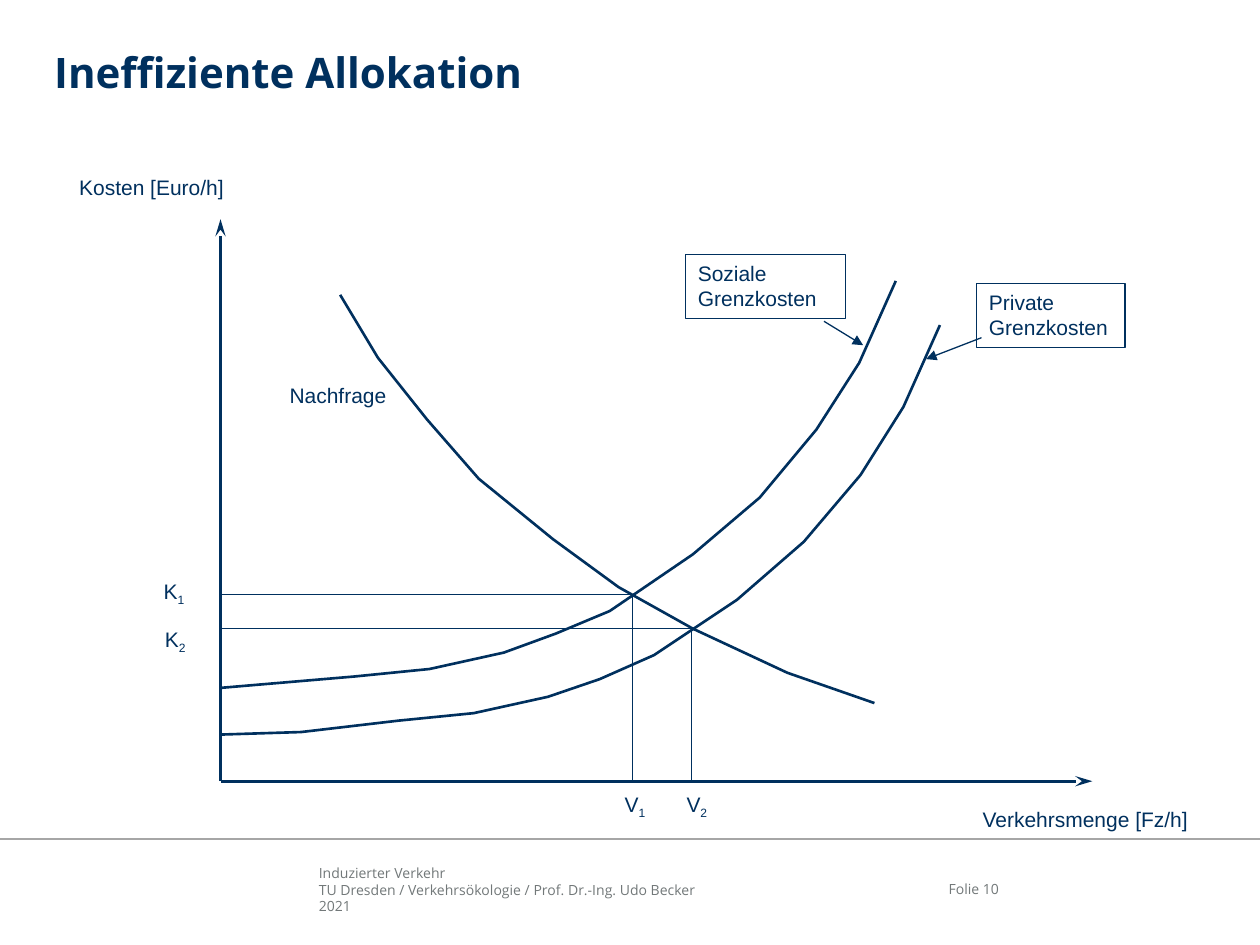
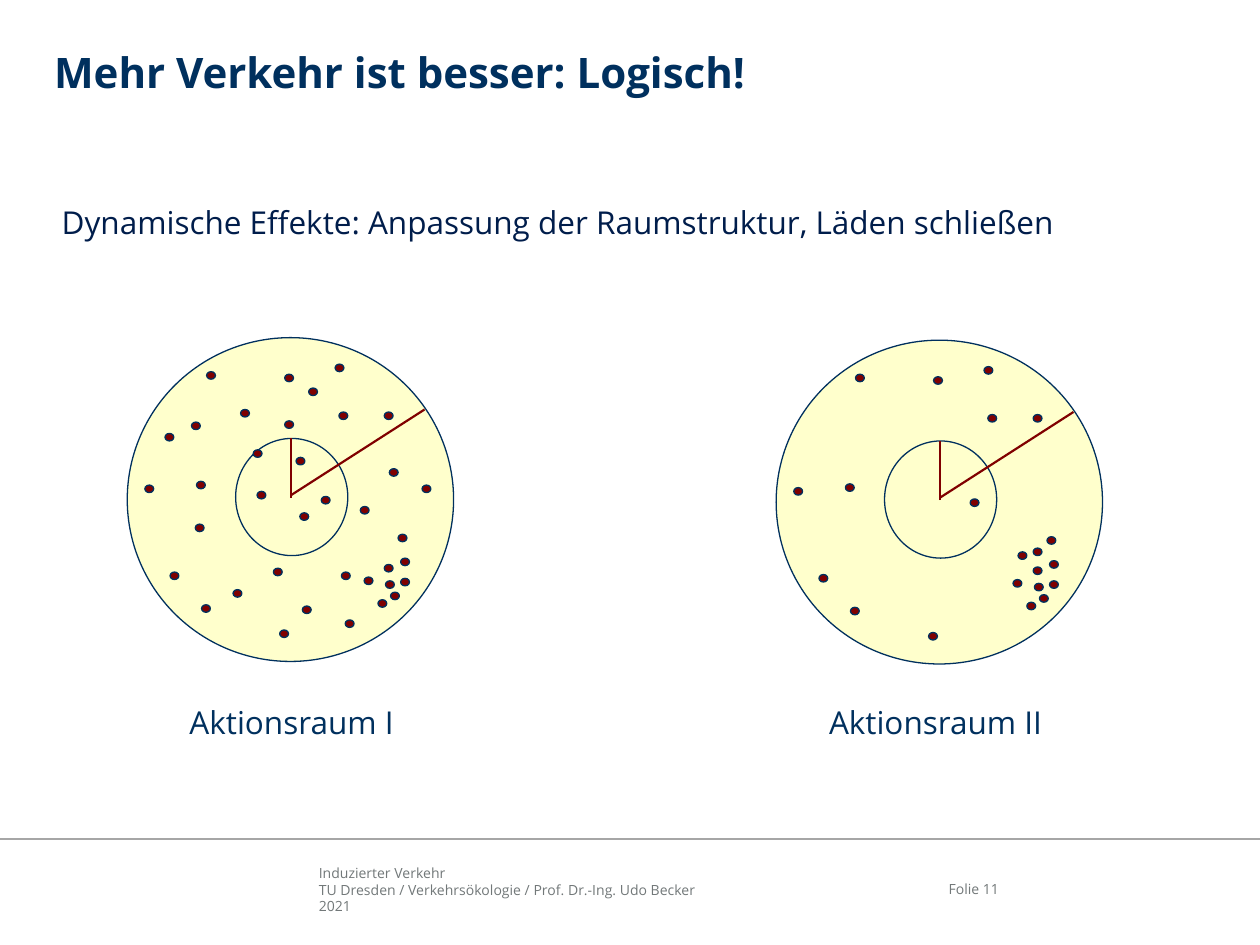
from dataclasses import dataclass

from lxml import etree
from pptx import Presentation
from pptx import util as u
from pptx.dml.color import RGBColor
from pptx.enum import shapes, text
from pptx.oxml import ns

COLORS = {
    "navy": "00305E",
    "deep_navy": "001D4B",
    "gray": "727879",
    "rule": "A6A6A6",
    "cream": "FFFFCC",
    "maroon": "800000",
}
HEADING_FONT, LABEL_FONT = "Open Sans", "Arial"
FIRST_NUMBER = 10
FOOTER = ["Induzierter Verkehr",
          "TU Dresden / Verkehrsökologie / Prof. Dr.-Ing. Udo Becker", "2021"]
Point = tuple[float, float]


@dataclass(frozen=True)
class TextStyle:
    font: str
    size: float
    color: str = "navy"
    bold: bool = False
    align: text.PP_ALIGN = text.PP_ALIGN.LEFT


@dataclass(frozen=True)
class Box:
    left: float
    top: float
    width: float
    height: float

    def lengths(self) -> list[u.Length]:
        return [cm(v) for v in (self.left, self.top, self.width, self.height)]

    def moved(self, dx: float, dy: float) -> "Box":
        return Box(self.left + dx, self.top + dy, self.width, self.height)


@dataclass(frozen=True)
class Label:
    words: str
    box: Box
    subscript: str = ""
    framed: bool = False


@dataclass(frozen=True)
class Line:
    start: Point
    end: Point
    width: float = 0.75
    color: str = "navy"
    arrow: str = ""
    arrow_length: str = "med"


@dataclass(frozen=True)
class ActionSpace:
    name: str
    offset: Point
    caption_left: float
    shops: list[Point]


TITLE = TextStyle(HEADING_FONT, 24, bold=True)
FOOTER_TEXT = TextStyle(HEADING_FONT, 8, "gray")
PAGE_TEXT = TextStyle(HEADING_FONT, 8, "gray", align=text.PP_ALIGN.RIGHT)
CAPTION = TextStyle(HEADING_FONT, 18, align=text.PP_ALIGN.CENTER)
STATEMENT = TextStyle(HEADING_FONT, 18, "deep_navy")
DIAGRAM_TEXT = TextStyle(LABEL_FONT, 12)

# Cost diagram, in inches
ORIGIN_X, ORIGIN_Y = 1.75, 6.2
OPTIMUM, MARKET = (5.02, 4.72), (5.49, 4.99)
SOCIAL_COSTS = [(1.75, 5.46), (2.81, 5.37), (3.41, 5.31), (4, 5.18), (4.41, 5.03),
                (4.84, 4.85), (5.5, 4.4), (6.03, 3.95), (6.48, 3.41), (6.82, 2.88),
                (7.11, 2.23)]
DEMAND = [(2.7, 2.34), (3, 2.84), (3.39, 3.33), (3.8, 3.8), (4.39, 4.28),
          (4.91, 4.66), (5.5, 4.99), (6.25, 5.34), (6.94, 5.58)]
PRIVATE_COSTS = [(1.75, 5.83), (2.39, 5.81), (3.16, 5.72), (3.76, 5.66), (4.35, 5.53),
                 (4.76, 5.39), (5.19, 5.2), (5.85, 4.76), (6.38, 4.3), (6.83, 3.77),
                 (7.17, 3.23), (7.46, 2.58)]
AXES = [Line((ORIGIN_X, ORIGIN_Y), end, 1.5, arrow="stealth", arrow_length="lg")
        for end in ((ORIGIN_X, 1.74), (8.67, ORIGIN_Y))]
POINTERS = [Line((6.54, 2.55), (6.85, 2.74), arrow="triangle"),
            Line((7.79, 2.68), (7.35, 2.85), arrow="triangle")]
LABELS = [
    Label("Verkehrsmenge [Fz/h]", Box(7.7, 6.35, 2.05, 0.3)),
    Label("Kosten [Euro/h]", Box(0.53, 1.34, 2.05, 0.3)),
    Label("Soziale Grenzkosten", Box(5.44, 2.02, 1.27, 0.51), framed=True),
    Label("Private Grenzkosten", Box(7.75, 2.25, 1.18, 0.51), framed=True),
    Label("Nachfrage", Box(2.2, 2.99, 2.05, 0.3)),
    Label("K", Box(1.2, 4.54, 0.49, 0.3), "1"),
    Label("K", Box(1.21, 4.92, 0.49, 0.3), "2"),
    Label("V", Box(4.86, 6.23, 0.49, 0.3), "1"),
    Label("V", Box(5.35, 6.23, 0.49, 0.3), "2"),
]

# Action spaces: shops by their upper left corner in the first space
REGION = Box(1.01, 2.68, 2.59, 2.57)
NEIGHBORHOOD = Box(1.87, 3.48, 0.89, 0.93)
RADII = [Line((2.31, 3.95), (2.31, 3.48), 1.25, "maroon"),
         Line((2.31, 3.93), (3.37, 3.25), 1.25, "maroon")]
LASTING_SHOPS = [
    (2.69, 3.27), (3.16, 4.24), (2.22, 5), (2.26, 2.97), (1.35, 4.54), (1.15, 3.85),
    (1.6, 4.8), (3.06, 4.61), (3, 4.76), (2.89, 4.58), (3.18, 4.59), (3.05, 4.48),
    (2.66, 2.89), (1.56, 3.82), (1.64, 2.95), (3.05, 3.27), (3.1, 4.7), (3.18, 4.43),
    (2.55, 3.94),
]
CLOSING_SHOPS = [
    (1.85, 4.68), (1.52, 3.35), (2.74, 4.92), (2.71, 4.54), (1.55, 4.16), (3.35, 3.85),
    (2.17, 4.51), (3.09, 3.72), (1.91, 3.25), (2.26, 3.34), (2.86, 4.02), (2.4, 4.81),
    (1.31, 3.44), (2.45, 3.08), (2.38, 4.07), (2.04, 3.9), (2.35, 3.63), (2.01, 3.57),
]
NEW_SHOPS = [(3.05, 4.33), (2.93, 4.36)]
SPACES = [
    ActionSpace("Aktionsraum I", (0, 0), 0.83, LASTING_SHOPS + CLOSING_SHOPS),
    ActionSpace("Aktionsraum II", (5.15, 0.02), 5.94, LASTING_SHOPS + NEW_SHOPS),
]


def cm(inches: float) -> u.Length:
    return u.Cm(inches * 2.54)


def rgb(name: str) -> RGBColor:
    return RGBColor.from_string(COLORS[name])


# Text
def format_paragraph(paragraph, style: TextStyle) -> None:
    paragraph.alignment = style.align
    paragraph.line_spacing = 1.0
    paragraph.space_before = u.Pt(0)
    font = paragraph.font
    font.name, font.size, font.bold = style.font, u.Pt(style.size), style.bold
    font.color.rgb = rgb(style.color)


def fill_text(shape, lines: list[str], style: TextStyle,
              insets: tuple[float, ...] = (0.1, 0.05, 0.1, 0.05)) -> None:
    frame = shape.text_frame
    frame.word_wrap = True
    frame.auto_size = text.MSO_AUTO_SIZE.NONE
    frame.vertical_anchor = text.MSO_ANCHOR.TOP
    (frame.margin_left, frame.margin_top,
     frame.margin_right, frame.margin_bottom) = map(cm, insets)
    frame.text = "\n".join(lines)
    for paragraph in frame.paragraphs:
        format_paragraph(paragraph, style)


def add_text(slide, box: Box, lines: list[str], style: TextStyle, **options) -> None:
    fill_text(slide.shapes.add_textbox(*box.lengths()), lines, style, **options)


# Lines and shapes
def add_line(slide, line: Line, offset: Point = (0, 0)) -> None:
    dx, dy = offset
    ends = [cm(v) for x, y in (line.start, line.end) for v in (x + dx, y + dy)]
    connector = slide.shapes.add_connector(shapes.MSO_CONNECTOR.STRAIGHT, *ends)
    connector.line.width = u.Pt(line.width)
    connector.line.color.rgb = rgb(line.color)
    if line.arrow:
        etree.SubElement(connector.line._get_or_add_ln(), ns.qn("a:tailEnd"),
                         type=line.arrow, w="med", len=line.arrow_length)
    etree.SubElement(connector._element.spPr, ns.qn("a:effectLst"))


def outline(shape, width: float = 0.75, fill: str = "") -> None:
    shape.shadow.inherit = False
    shape.line.color.rgb = rgb("navy")
    shape.line.width = u.Pt(width)
    if fill:
        shape.fill.solid()
        shape.fill.fore_color.rgb = rgb(fill)
    else:
        shape.fill.background()


def add_ellipse(slide, box: Box, fill: str) -> None:
    outline(slide.shapes.add_shape(shapes.MSO_SHAPE.OVAL, *box.lengths()), fill=fill)


def add_curve(slide, points: list[Point]) -> None:
    first, *rest = [(cm(x), cm(y)) for x, y in points]
    builder = slide.shapes.build_freeform(*first)
    builder.add_line_segments(rest, close=False)
    outline(builder.convert_to_shape(), 1.5)


def add_label(slide, label: Label) -> None:
    if label.framed:
        shape = slide.shapes.add_shape(shapes.MSO_SHAPE.RECTANGLE, *label.box.lengths())
        outline(shape)
    else:
        shape = slide.shapes.add_textbox(*label.box.lengths())
    fill_text(shape, [label.words], DIAGRAM_TEXT)
    if label.subscript:
        run = shape.text_frame.paragraphs[0].add_run()
        run.text = label.subscript
        run._r.get_or_add_rPr().set("baseline", "-25000")


# Slides
def start_slide(presentation, title: str):
    slide = presentation.slides.add_slide(presentation.slide_layouts[5])
    number = FIRST_NUMBER + len(presentation.slides) - 1
    no_insets = (0, 0, 0, 0)
    add_text(slide, Box(2.53, 6.86, 4.52, 0.4), FOOTER, FOOTER_TEXT, insets=no_insets)
    add_line(slide, Line((0, 6.66), (10, 6.66), 1, "rule"))
    add_text(slide, Box(7.17, 6.99, 0.76, 0.2), [f"Folie {number}"], PAGE_TEXT,
             insets=no_insets)
    heading = slide.shapes.title
    heading.left, heading.top, heading.width, heading.height = Box(0.43, 0.37, 9.15, 0.89).lengths()
    fill_text(heading, [title], TITLE, insets=no_insets)
    return slide


def build_cost_slide(presentation) -> None:
    slide = start_slide(presentation, "Ineffiziente Allokation")
    for points in (SOCIAL_COSTS, DEMAND, PRIVATE_COSTS):
        add_curve(slide, points)
    # Each equilibrium is projected onto both axes
    projections = [Line(point, foot) for point in (OPTIMUM, MARKET)
                   for foot in ((point[0], ORIGIN_Y), (ORIGIN_X, point[1]))]
    for line in AXES + POINTERS + projections:
        add_line(slide, line)
    for label in LABELS:
        add_label(slide, label)


def build_space_slide(presentation) -> None:
    slide = start_slide(presentation, "Mehr Verkehr ist besser: Logisch!")
    for space in SPACES:
        for circle in (REGION, NEIGHBORHOOD):
            add_ellipse(slide, circle.moved(*space.offset), "cream")
        for x, y in space.shops:
            add_ellipse(slide, Box(x, y, 0.07, 0.06).moved(*space.offset), "maroon")
        for radius in RADII:
            add_line(slide, radius, space.offset)
        add_text(slide, Box(space.caption_left, 5.53, 2.97, 0.4), [space.name], CAPTION)
    add_text(slide, Box(0.49, 1.56, 8.73, 0.4),
             ["Dynamische Effekte: Anpassung der Raumstruktur, Läden schließen"],
             STATEMENT, insets=(0, 0.05, 0.1, 0.05))


def main() -> None:
    presentation = Presentation()
    presentation.slide_width, presentation.slide_height = u.Cm(25.4), u.Cm(19.05)
    build_cost_slide(presentation)
    build_space_slide(presentation)
    presentation.save("out.pptx")


if __name__ == "__main__":
    main()
